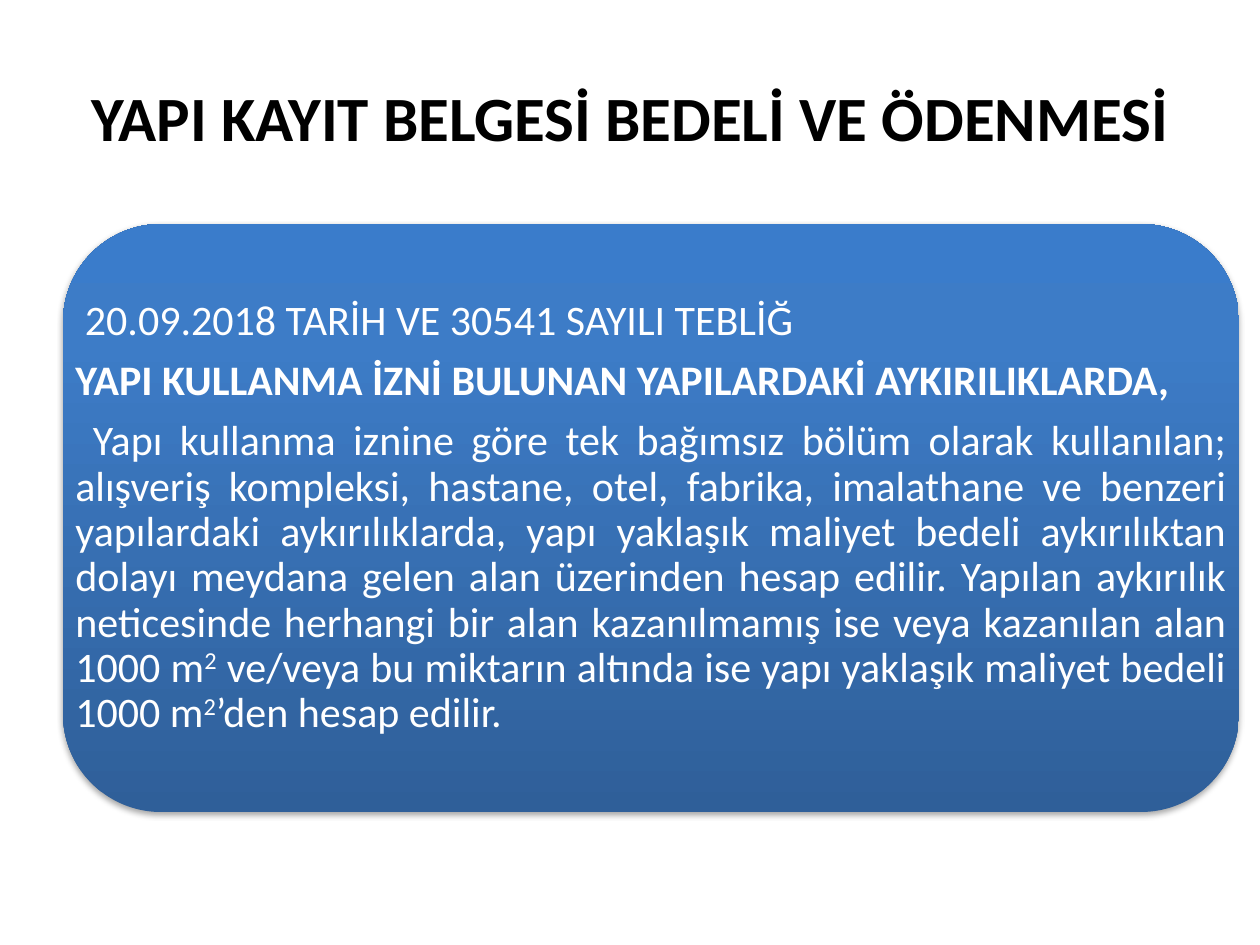
from lxml import etree
from pptx import Presentation, util as u
from pptx.dml.color import RGBColor
from pptx.enum import shapes, text
from pptx.oxml import parse_xml
from pptx.oxml.ns import nsdecls, qn

PX = u.Inches(1) / 126
COLORS = {"dark": "2F5F99", "mid": "3D7CC7", "light": "3A7CCB",
          "white": "FFFFFF", "black": "000000"}
STOPS = [(0, "dark"), (80, "mid"), (100, "light")]
PANEL = (63, 224, 1176, 588)
TITLE = (63, 38, 1134, 157)
HEAD = [{"runs": [("YAPI KAYIT BELGESİ BEDELİ VE ÖDENMESİ", {"bold": True})],
         "format": {"alignment": text.PP_ALIGN.CENTER}}]
LEFT = {"alignment": text.PP_ALIGN.LEFT, "line_spacing": 0.9, "space_after": u.Pt(8.4)}
BODY = [
    {"runs": [(" 20.09.2018 TARİH VE 30541 SAYILI TEBLİĞ", {})], "format": LEFT},
    {"runs": [("YAPI KULLANMA İZNİ BULUNAN YAPILARDAKİ AYKIRILIKLARDA,", {"bold": True})],
     "format": LEFT},
    {"runs": [
        (" Yapı kullanma iznine göre tek bağımsız bölüm olarak kullanılan; "
         "alışveriş kompleksi, hastane, otel, fabrika, imalathane ve benzeri "
         "yapılardaki aykırılıklarda, yapı yaklaşık maliyet bedeli aykırılıktan "
         "dolayı meydana gelen alan üzerinden hesap edilir. Yapılan aykırılık "
         "neticesinde herhangi bir alan kazanılmamış ise veya kazanılan alan 1000 m", {}),
        ("2", {"raised": True}),
        (" ve/veya bu miktarın altında ise yapı yaklaşık maliyet bedeli 1000 m", {}),
        ("2", {"raised": True}),
        ("’den hesap edilir.", {})],
     "format": {**LEFT, "alignment": text.PP_ALIGN.JUSTIFY}},
]


def assign(item, values):
    for name, value in values.items():
        setattr(item, name, value)


class Deck:
    def __init__(self, font):
        self.font = font
        self.file = Presentation()
        assign(self.file, {"slide_width": u.Inches(10), "slide_height": u.Inches(7.5)})
        self.slide = self.file.slides.add_slide(self.file.slide_layouts[6])

    def scale(self, box):
        return [round(n * PX) for n in box]

    def panel(self, box, stops):
        """Add a rounded panel with an upward gradient and a soft shadow."""
        shape = self.slide.shapes.add_shape(
            shapes.MSO_SHAPE.ROUNDED_RECTANGLE, *self.scale(box))
        shape.line.fill.background()
        shape.shadow.inherit = False
        marks = "".join(f'<a:gs pos="{at * 1000}"><a:srgbClr val="{COLORS[name]}"/></a:gs>'
                        for at, name in stops)
        fill = parse_xml(f'<a:gradFill {nsdecls("a")} rotWithShape="1"><a:gsLst>{marks}'
                         '</a:gsLst><a:lin ang="16200000" scaled="0"/></a:gradFill>')
        props = shape.fill._xPr
        props.find(qn("a:prstGeom")).addnext(fill)
        glow = etree.SubElement(
            props.find(qn("a:effectLst")), qn("a:outerShdw"), blurRad=str(u.Pt(3.1)),
            dist=str(u.Pt(1.8)), dir="5400000", rotWithShape="0")
        tint = etree.SubElement(glow, qn("a:srgbClr"), val=COLORS["black"])
        etree.SubElement(tint, qn("a:alpha"), val="35000")

    def words(self, box, paras, size, color, inset):
        frame = self.slide.shapes.add_textbox(*self.scale(box)).text_frame
        assign(frame, {"word_wrap": True, "vertical_anchor": text.MSO_ANCHOR.MIDDLE})
        assign(frame, {f"margin_{side}": u.Inches(inset)
                       for side in ("left", "right", "top", "bottom")})
        for i, para in enumerate(paras):
            line = frame.add_paragraph() if i else frame.paragraphs[0]
            assign(line, para["format"])
            for words, style in para["runs"]:
                run = line.add_run()
                run.text = words
                assign(run.font, {"name": self.font, "size": u.Pt(size),
                                  "bold": style.get("bold", False)})
                run.font.color.rgb = RGBColor.from_string(COLORS[color])
                if style.get("raised"):
                    run.font._rPr.set("baseline", "30000")


def main():
    deck = Deck("Calibri")
    deck.panel(PANEL, STOPS)
    deck.words(PANEL, BODY, 24, "white", 0.1)
    deck.words(TITLE, HEAD, 36, "black", 0.05)
    deck.file.save("out.pptx")


if __name__ == "__main__":
    main()
